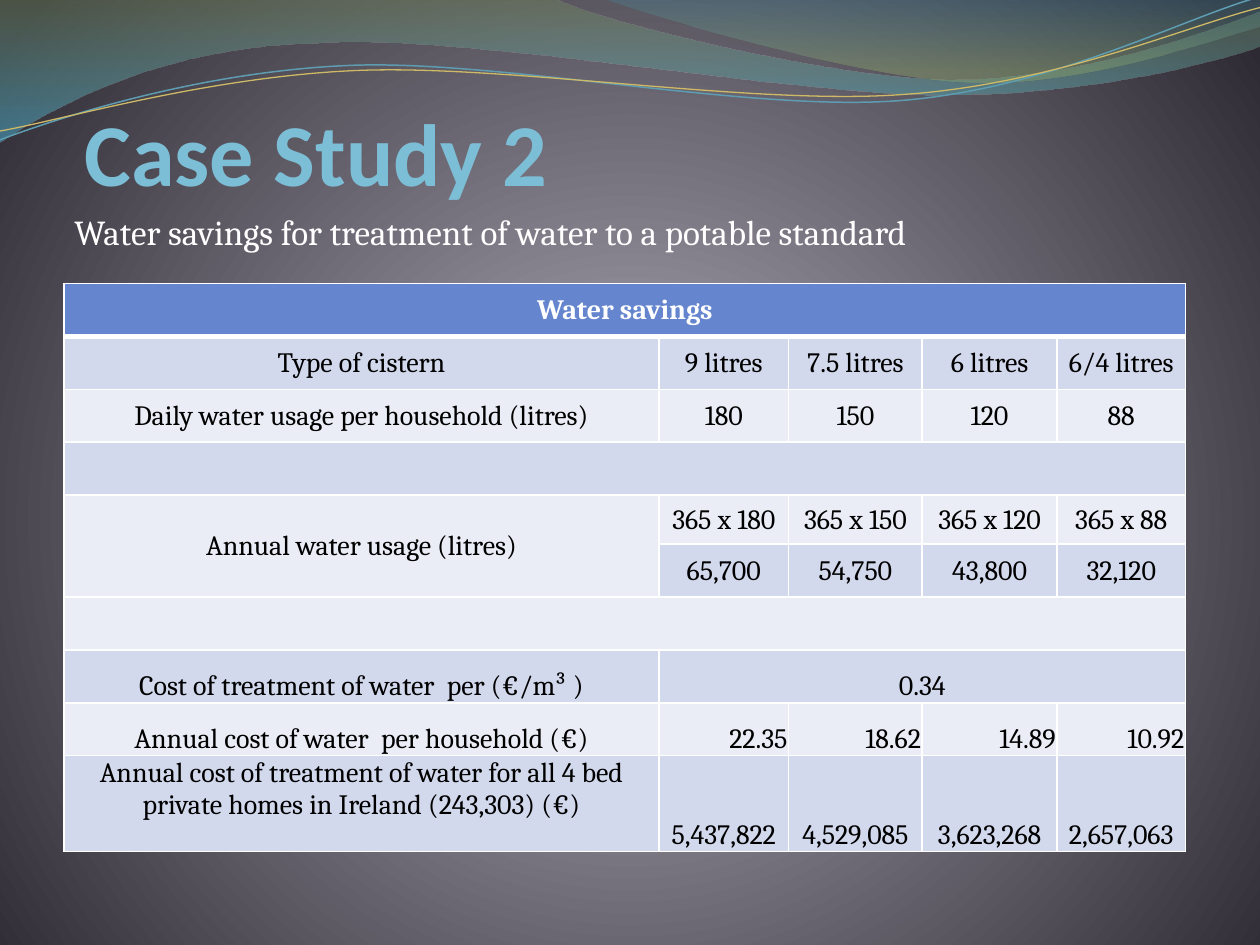
import pptx
import pptx.util
import pptx.oxml
import pptx.oxml.ns
import pptx.dml.color
import pptx.enum.text

Inches, Pt = pptx.util.Inches, pptx.util.Pt
RGBColor = pptx.dml.color.RGBColor
ALIGN, ANCHOR = pptx.enum.text.PP_ALIGN, pptx.enum.text.MSO_ANCHOR

WHITE = RGBColor(0xFF, 0xFF, 0xFF)
BLACK = RGBColor(0, 0, 0)
SKY = RGBColor(0x7D, 0xBE, 0xD7)
HEADER_BLUE = RGBColor(0x65, 0x85, 0xCF)
BANDS = [RGBColor(0xEA, 0xED, 0xF6), RGBColor(0xD3, 0xD9, 0xED)]
BACKDROP = [
    (0, RGBColor(0x96, 0x92, 0x9E), 100),
    (25, RGBColor(0x91, 0x8D, 0x98), 100),
    (100, RGBColor(0x2D, 0x2A, 0x33), 100),
]
DOWNWARD = '<a:lin ang="5400000" scaled="1"/>'
FROM_CENTRE = ('<a:path path="circle"><a:fillToRect l="10000" t="110000" '
               'r="10000" b="100000"/></a:path>')

TITLE = "Case Study 2"
SUBTITLE = "Water savings for treatment of water to a potable standard"
SAVINGS = [
    ["Water savings"],
    ["Type of cistern", "9 litres", "7.5 litres", "6 litres", "6/4 litres"],
    ["Daily water usage per household (litres)", "180", "150", "120", "88"],
    [""],
    ["Annual water usage (litres)", "365 x 180", "365 x 150", "365 x 120", "365 x 88"],
    [None, "65,700", "54,750", "43,800", "32,120"],
    [""],
    ["Cost of treatment of water  per (€/m³ )", "0.34"],
    ["Annual cost of water  per household (€)", "22.35", "18.62", "14.89", "10.92"],
    ["Annual cost of treatment of water for all 4 bed private homes in Ireland (243,303) (€)",
     "5,437,822", "4,529,085", "3,623,268", "2,657,063"],
]
COLUMN_WIDTHS = [4.72, 1.03, 1.06, 1.07, 1.02]
ROW_HEIGHTS = [0.42] * 4 + [0.39] + [0.42] * 4 + [0.76]
FIRST_COST_ROW, HOUSEHOLD_ROW, NATIONAL_ROW = 7, 8, 9

WAVES = [
    ([[(0, 0)], [(4.4, -0.01)],
      [(4.76, 0.17), (6.64, 0.63), (7.58, 0.63)],
      [(8.53, 0.63), (9.58, 0.26), (10, 0.09)], [(10.01, 0.36)],
      [(9.83, 0.44), (8.7, 0.76), (7.46, 0.75)],
      [(6.22, 0.75), (3.82, 0.28), (2.57, 0.34)],
      [(1.29, 0.36), (0.46, 0.83), (-0.01, 1.13)], [(0, 0)]],
     [(0, RGBColor(0x74, 0x85, 0x5E), 45), (100, RGBColor(0x4A, 0xAC, 0xCE), 55)]),
    ([[(4.79, -0.01)],
      [(5.09, 0.11), (6.82, 0.62), (7.69, 0.65)],
      [(8.56, 0.69), (9.61, 0.32), (10, 0.21)], [(10, 0)], [(4.79, -0.01)]],
     [(0, RGBColor(0x45, 0x88, 0x9F), 30), (80, RGBColor(0x8A, 0xA3, 0x6D), 45)]),
]
STRANDS = [
    ([[(0, 1.11)],
      [(0.48, 0.93), (1.58, 0.57), (2.77, 0.52)],
      [(3.95, 0.47), (5.93, 0.89), (7.13, 0.8)],
      [(8.33, 0.71), (9.38, 0.15), (9.98, -0.02)]],
     RGBColor(0x5E, 0x9C, 0xB1), 0.85),
    ([[(0, 1.04)],
      [(0.47, 0.96), (1.64, 0.61), (2.83, 0.56)],
      [(4.03, 0.51), (5.97, 0.84), (7.17, 0.75)],
      [(8.36, 0.67), (9.41, 0.21), (10, 0.06)]],
     RGBColor(0xCE, 0xB9, 0x66), 0.75),
]


def drawing_element(tag, content="", attributes=""):
    namespace = pptx.oxml.ns.nsdecls("a")
    return pptx.oxml.parse_xml(f"<a:{tag} {namespace} {attributes}>{content}</a:{tag}>")


def set_gradient(fill, owner, stops, direction):
    fill.gradient()
    stop_list = "".join(
        f'<a:gs pos="{place * 1000}"><a:srgbClr val="{color}">'
        f'<a:alpha val="{opacity * 1000}"/></a:srgbClr></a:gs>'
        for place, color, opacity in stops)
    default = owner.xpath(".//a:gradFill")[0]
    gradient = drawing_element("gradFill", f"<a:gsLst>{stop_list}</a:gsLst>{direction}",
                               'rotWithShape="1"')
    default.getparent().replace(default, gradient)


def add_curve(slide, segments, close):
    start, *rest = [(Inches(x), Inches(y)) for segment in segments for x, y in segment]
    builder = slide.shapes.build_freeform(*start)
    builder.add_line_segments(rest, close=close)
    curve = builder.convert_to_shape()
    curve.shadow.inherit = False
    steps = iter(curve.element.xpath(".//a:lnTo"))
    for segment in segments[1:]:
        lines = [next(steps) for point in segment]
        if len(lines) == 1:
            continue
        bezier = drawing_element("cubicBezTo")
        lines[0].addprevious(bezier)
        for line in lines:
            bezier.append(line[0])
            line.getparent().remove(line)
    return curve


def write(frame, text, size, color, font="Cambria", bold=False, align=ALIGN.LEFT):
    paragraph = frame.paragraphs[0]
    paragraph.text = text
    paragraph.alignment = align
    paragraph.font.name, paragraph.font.size = font, Pt(size)
    paragraph.font.bold = bold
    paragraph.font.color.rgb = color
    return paragraph


def set_margins(box, left, top, right, bottom):
    box.margin_left, box.margin_top = Inches(left), Inches(top)
    box.margin_right, box.margin_bottom = Inches(right), Inches(bottom)


def set_borders(cell, row):
    widths = {"lnL": 1, "lnR": 1, "lnT": 3 if row == 1 else 1, "lnB": 3 if row == 0 else 1}
    properties = cell._tc.get_or_add_tcPr()
    for position, (side, width) in enumerate(widths.items()):
        color = f'<a:solidFill><a:srgbClr val="{WHITE}"/></a:solidFill>'
        properties.insert(position, drawing_element(side, color, f'w="{Pt(width)}"'))


def add_savings_table(slide):
    table = slide.shapes.add_table(
        len(SAVINGS), len(COLUMN_WIDTHS), Inches(0.51), Inches(2.25),
        Inches(sum(COLUMN_WIDTHS)), Inches(sum(ROW_HEIGHTS))).table
    for column, width in zip(table.columns, COLUMN_WIDTHS):
        column.width = Inches(width)
    last = len(COLUMN_WIDTHS) - 1
    for r, (values, height) in enumerate(zip(SAVINGS, ROW_HEIGHTS)):
        table.rows[r].height = Inches(height)
        for c in range(last + 1):
            cell = table.cell(r, c)
            cell.fill.solid()
            cell.fill.fore_color.rgb = BANDS[r % 2] if r else HEADER_BLUE
            set_borders(cell, r)
        for c, value in enumerate(values):
            cell = table.cell(r, c)
            if value is None:
                table.cell(r - 1, c).merge(cell)
                continue
            if not value:
                continue
            set_margins(cell, 0.01, 0.01, 0.01, 0)
            cell.vertical_anchor = ANCHOR.BOTTOM if r >= FIRST_COST_ROW else ANCHOR.MIDDLE
            if (r, c) == (NATIONAL_ROW, 0):
                cell.vertical_anchor = ANCHOR.TOP
            align = ALIGN.RIGHT if r == HOUSEHOLD_ROW and c else ALIGN.CENTER
            write(cell.text_frame, value, 16, BLACK if r else WHITE, bold=r == 0, align=align)
        if len(values) <= last:
            table.cell(r, len(values) - 1).merge(table.cell(r, last))


def main():
    deck = pptx.Presentation()
    deck.slide_width, deck.slide_height = Inches(10), Inches(7.5)
    slide = deck.slides.add_slide(deck.slide_layouts[5])
    set_gradient(slide.background.fill, slide.element, BACKDROP, FROM_CENTRE)

    for segments, stops in WAVES:
        wave = add_curve(slide, segments, True)
        set_gradient(wave.fill, wave.element, stops, DOWNWARD)
        wave.line.fill.background()
    for segments, color, width in STRANDS:
        strand = add_curve(slide, segments, False)
        strand.fill.background()
        strand.line.color.rgb, strand.line.width = color, Pt(width)

    title = slide.shapes.title
    title.left, title.top, title.width, title.height = map(Inches, (0.67, 0.76, 8.35, 0.86))
    title.text_frame.vertical_anchor = ANCHOR.BOTTOM
    title.text_frame.auto_size = pptx.enum.text.MSO_AUTO_SIZE.NONE
    set_margins(title.text_frame, 0, 0, 0.02, 0)
    write(title.text_frame, TITLE, 50.4, SKY, font="Calibri", bold=True)

    subtitle = slide.shapes.add_textbox(*map(Inches, (0.59, 1.62, 8.28, 0.53))).text_frame
    subtitle.word_wrap = True
    set_margins(subtitle, 0, 0.05, 0.02, 0.05)
    write(subtitle, SUBTITLE, 20, WHITE).space_before = Pt(4)

    add_savings_table(slide)
    deck.save("out.pptx")


if __name__ == "__main__":
    main()
